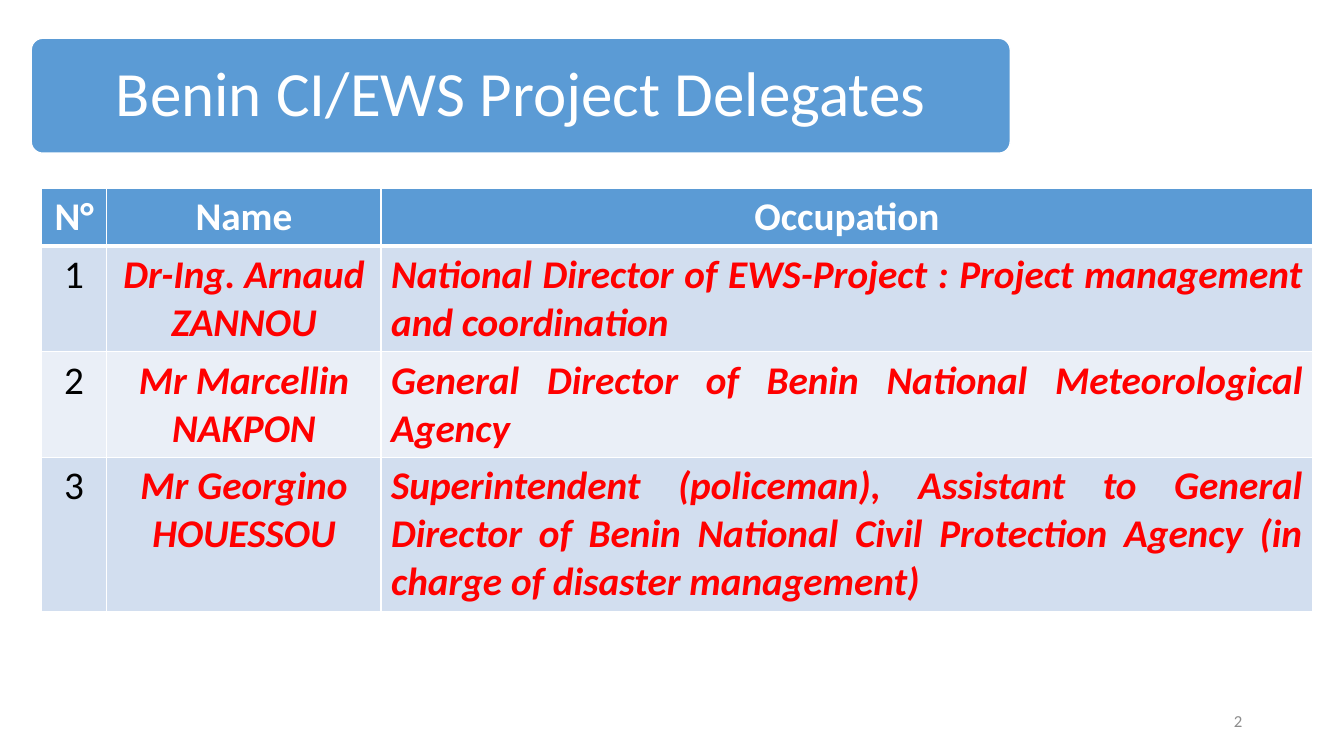
import pptx
import pptx.dml.color
import pptx.enum.shapes
import pptx.enum.text
import pptx.oxml
import pptx.oxml.ns
import pptx.util
from pptx.util import Inches

COLORS = {
    "blue": "5B9BD5", "band_dark": "D2DEEF", "band_light": "EAEFF7",
    "white": "FFFFFF", "black": "000000", "red": "FF0000", "gray": "8C8C8C",
}
ALIGN = pptx.enum.text.PP_ALIGN
MIDDLE = pptx.enum.text.MSO_ANCHOR.MIDDLE


def rgb(name):
    return pptx.dml.color.RGBColor.from_string(COLORS[name])


class DelegatesSlide:
    font = "Calibri"

    def __init__(self, prs):
        self.s = prs.slides.add_slide(prs.slide_layouts[6])

    def add_text(self, tf, text, size, color, align, **formats):
        p = tf.paragraphs[0]
        p.alignment = align
        r = p.add_run()
        r.text = text
        values = {"name": self.font, "size": pptx.util.Pt(size), **formats}
        for key, value in values.items():
            setattr(r.font, key, value)
        r.font.color.rgb = rgb(color)
        return p

    def frame(self, sp, inset_x, inset_y):
        tf = sp.text_frame
        values = {
            "word_wrap": True, "vertical_anchor": MIDDLE,
            "margin_left": Inches(inset_x), "margin_right": Inches(inset_x),
            "margin_top": Inches(inset_y), "margin_bottom": Inches(inset_y),
        }
        for key, value in values.items():
            setattr(tf, key, value)
        return tf

    def banner(self, text, box):
        shape = pptx.enum.shapes.MSO_SHAPE.ROUNDED_RECTANGLE
        sp = self.s.shapes.add_shape(shape, *map(Inches, box))
        sp.adjustments[0] = 0.1
        sp.shadow.inherit = False
        sp.fill.solid()
        sp.fill.fore_color.rgb = rgb("blue")
        sp.line.color.rgb = rgb("white")
        sp.line.width = pptx.util.Pt(1)
        p = self.add_text(self.frame(sp, 0.22, 0.22), text, 45, "white", ALIGN.CENTER)
        p.line_spacing = 0.9

    def page_number(self, text, box):
        sp = self.s.shapes.add_textbox(*map(Inches, box))
        self.add_text(self.frame(sp, 0.1, 0.05), text, 12, "gray", ALIGN.RIGHT)

    def borders(self, cell, **widths):
        tcPr = cell._tc.get_or_add_tcPr()
        for side, width in widths.items():
            tcPr.append(pptx.oxml.parse_xml(
                f'<a:ln{side} {pptx.oxml.ns.nsdecls("a")} w="{pptx.util.Pt(width)}">'
                f'<a:solidFill><a:srgbClr val="{COLORS["white"]}"/></a:solidFill>'
                f'</a:ln{side}>'))

    def cell(self, cell, text, row, col):
        # White rules, heavier under the header
        self.borders(cell, L=1, R=1, T=3 if row == 1 else 1, B=3 if row == 0 else 1)
        cell.fill.solid()
        if row == 0:
            fill, color = "blue", "white"
        else:
            fill = "band_dark" if row % 2 else "band_light"
            color = "black" if col == 0 else "red"
        cell.fill.fore_color.rgb = rgb(fill)
        align = ALIGN.JUSTIFY if row and col == 2 else ALIGN.CENTER
        self.add_text(cell.text_frame, text, 28, color, align,
                      bold=color != "black", italic=color == "red")

    def table(self, rows, left, top, widths, heights):
        table = self.s.shapes.add_table(
            len(rows), len(widths), Inches(left), Inches(top),
            Inches(sum(widths)), Inches(sum(heights))).table
        for column, width in zip(table.columns, widths):
            column.width = Inches(width)
        for i, (texts, height) in enumerate(zip(rows, heights)):
            table.rows[i].height = Inches(height)
            for j, text in enumerate(texts):
                self.cell(table.cell(i, j), text, i, j)


DELEGATES = [
    ("N°", "Name", "Occupation"),
    ("1", "Dr-Ing. Arnaud ZANNOU",
     "National Director of EWS-Project : Project management and coordination"),
    ("2", "Mr Marcellin NAKPON",
     "General Director of Benin National Meteorological Agency"),
    ("3", "Mr Georgino HOUESSOU",
     "Superintendent (policeman), Assistant to General Director of Benin "
     "National Civil Protection Agency (in charge of disaster management)"),
]


def main():
    prs = pptx.Presentation()
    prs.slide_width, prs.slide_height = Inches(13.33), Inches(7.5)
    slide = DelegatesSlide(prs)
    # Title
    slide.banner("Benin CI/EWS Project Delegates", (0.31, 0.38, 9.71, 1.14))
    # Page number
    slide.page_number("2", (9.42, 6.95, 3, 0.4))
    # Delegates
    slide.table(DELEGATES, 0.41, 1.87, (0.65, 2.72, 9.24), (0.57, 1.05, 1.05, 1.53))
    prs.save("out.pptx")


if __name__ == "__main__":
    main()
